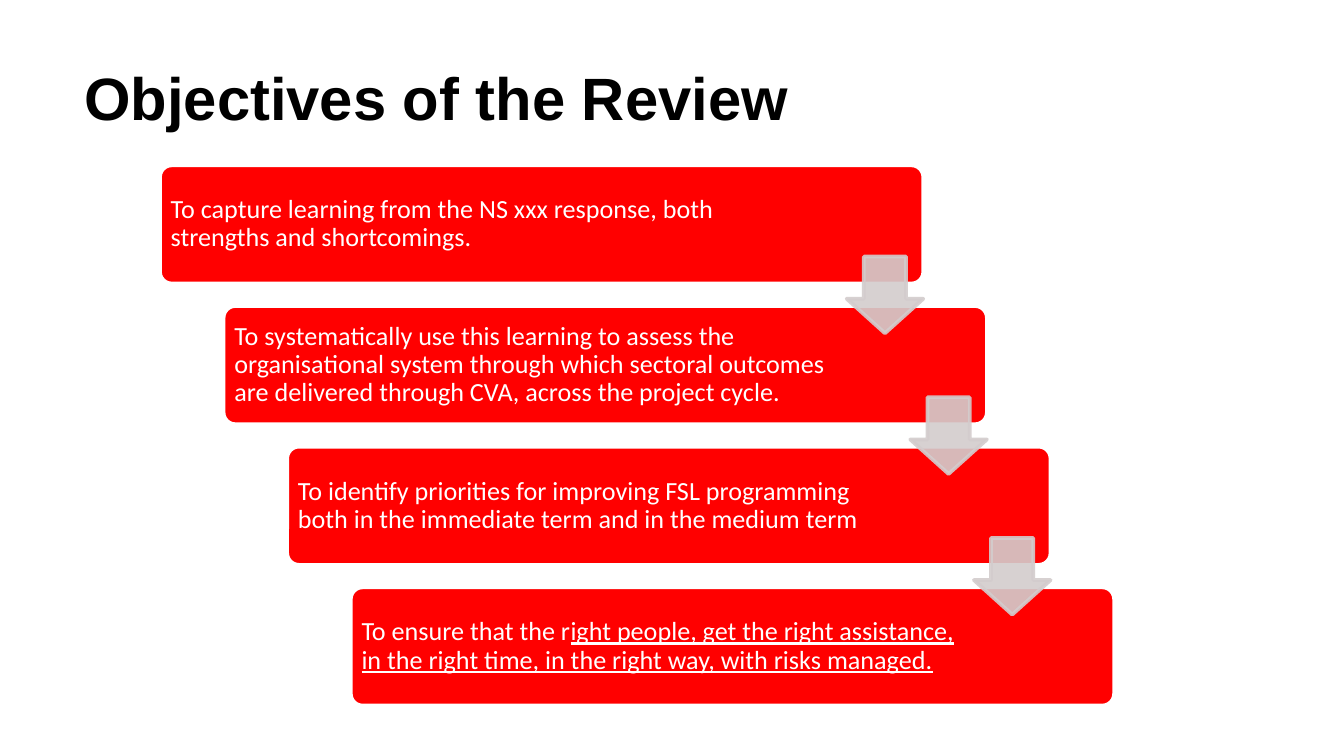
from lxml.etree import SubElement
from pptx import Presentation
from pptx.dml.color import RGBColor
from pptx.enum.shapes import MSO_SHAPE
from pptx.enum.text import MSO_ANCHOR
from pptx.oxml.ns import qn
from pptx.util import Inches, Pt

RED = RGBColor(0xFF, 0x00, 0x00)
WHITE = RGBColor(0xFF, 0xFF, 0xFF)
BLACK = RGBColor(0x00, 0x00, 0x00)
GREY = RGBColor(0xD3, 0xCC, 0xCD)

OBJECTIVES = [
    ("To capture learning from the NS xxx response, both strengths and shortcomings.", ""),
    ("To systematically use this learning to assess the organisational system through "
     "which sectoral outcomes are delivered through CVA, across the project cycle.", ""),
    ("To identify priorities for improving FSL programming both in the immediate term "
     "and in the medium term", ""),
    ("To ensure that the r",
     "ight people, get the right assistance, in the right time, in the right way, "
     "with risks managed."),
]
CARD_WIDTH, CARD_HEIGHT = 5.68, 0.88
ARROW_SIZE = 0.57
PADDING = 0.02


def format_run(run, font_name, size, color):
    run.font.name = font_name
    run.font.size = Pt(size)
    run.font.color.rgb = color


def add_title(slide, left, top, width, height):
    box = slide.shapes.add_textbox(Inches(left), Inches(top), Inches(width), Inches(height))
    box.text_frame.word_wrap = True
    box.text_frame.text = "Objectives of the Review"
    run = box.text_frame.paragraphs[0].runs[0]
    format_run(run, "Arial", 32, BLACK)
    run.font.bold = True


def add_filled_shape(slide, kind, box, adjustments, fill, line):
    shape = slide.shapes.add_shape(kind, *map(Inches, box))
    shape.shadow.inherit = False
    for index, value in enumerate(adjustments):
        shape.adjustments[index] = value
    shape.fill.solid()
    shape.fill.fore_color.rgb = fill
    shape.line.color.rgb = line
    shape.line.width = Pt(2)
    return shape


def add_card(slide, left, top, text_width, plain, underlined):
    add_filled_shape(slide, MSO_SHAPE.ROUNDED_RECTANGLE,
                     (left, top, CARD_WIDTH, CARD_HEIGHT), [0.1], RED, WHITE)
    box = slide.shapes.add_textbox(Inches(left + PADDING), Inches(top + PADDING),
                                   Inches(text_width), Inches(CARD_HEIGHT - 2 * PADDING))
    frame = box.text_frame
    frame.word_wrap = True
    frame.vertical_anchor = MSO_ANCHOR.MIDDLE
    frame.margin_left = frame.margin_right = Inches(0.06)
    frame.margin_top = frame.margin_bottom = Inches(0.06)
    frame.text = plain
    paragraph = frame.paragraphs[0]
    paragraph.line_spacing = 0.9
    if underlined:
        run = paragraph.add_run()
        run.text = underlined
        run.font.underline = True
    for run in paragraph.runs:
        format_run(run, "Calibri", 14, WHITE)


def add_arrow(slide, left, top):
    arrow = add_filled_shape(slide, MSO_SHAPE.DOWN_ARROW,
                             (left, top, ARROW_SIZE, ARROW_SIZE), [0.55, 0.45], GREY, GREY)
    for color in arrow._element.spPr.iter(qn("a:srgbClr")):
        SubElement(color, qn("a:alpha"), val="90000")


def add_staircase(slide, left, top, width, height):
    step_count = len(OBJECTIVES) - 1
    step_x = (width - CARD_WIDTH) / step_count
    step_y = (height - CARD_HEIGHT) / step_count
    for index, (plain, underlined) in enumerate(OBJECTIVES):
        text_width = 4.65 if index == 0 else 4.58
        add_card(slide, left + index * step_x, top + index * step_y,
                 text_width, plain, underlined)
    for index in range(step_count):
        add_arrow(slide, left + CARD_WIDTH - ARROW_SIZE + index * step_x,
                  top + 0.68 + index * step_y)


def main():
    presentation = Presentation()
    presentation.slide_width = Inches(10)
    presentation.slide_height = presentation.slide_width * 9 // 16
    slide = presentation.slides.add_slide(presentation.slide_layouts[6])
    add_title(slide, 0.53, 0.4, 6.97, 0.64)
    add_staircase(slide, 1.19, 1.23, 7.1, 4.02)
    presentation.save("out.pptx")


if __name__ == "__main__":
    main()
